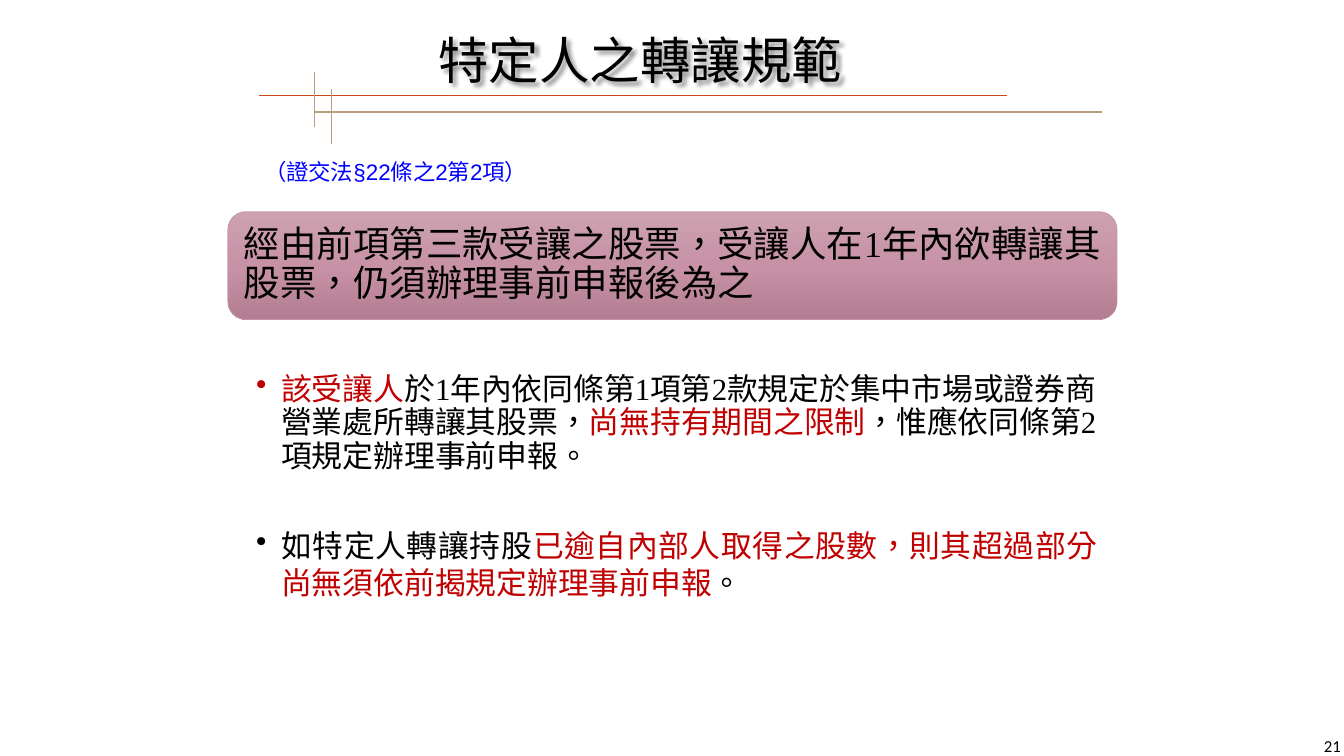
from typing import NamedTuple, Sequence

import pptx
import pptx.dml.color
import pptx.enum.shapes
import pptx.enum.text
import pptx.oxml
import pptx.oxml.ns
import pptx.util

Inches = pptx.util.Inches
Pt = pptx.util.Pt
RGBColor = pptx.dml.color.RGBColor
PP_ALIGN = pptx.enum.text.PP_ALIGN
MSO_ANCHOR = pptx.enum.text.MSO_ANCHOR

BLACK = RGBColor(0x00, 0x00, 0x00)
BLUE = RGBColor(0x00, 0x00, 0xFF)
RED = RGBColor(0xC0, 0x00, 0x00)
TAN = RGBColor(0xBA, 0x9C, 0x80)
ORANGE = RGBColor(0xCC, 0x46, 0x16)
BANNER_EDGE = RGBColor(0xC5, 0x94, 0xA6)
BANNER_TOP = RGBColor(0xCC, 0xA1, 0xB0)
BANNER_BOTTOM = RGBColor(0xB4, 0x7E, 0x92)

SERIF = "Times New Roman"


class Box(NamedTuple):
    left: float
    top: float
    width: float
    height: float


class Rule(NamedTuple):
    x1: float
    y1: float
    x2: float
    y2: float
    color: RGBColor


class Run(NamedTuple):
    text: str
    color: RGBColor = BLACK


class Bullet(NamedTuple):
    runs: Sequence[Run]
    align: PP_ALIGN
    line_spacing: float
    space_before: float


RULES = [
    Rule(3.12, 1.11, 10.93, 1.11, TAN),
    Rule(2.57, 0.95, 9.99, 0.95, ORANGE),
    Rule(3.12, 0.71, 3.12, 1.26, TAN),
    Rule(3.29, 0.88, 3.29, 1.43, TAN),
]

BULLETS = [
    Bullet([
        Run("該受讓人", RED),
        Run("於1年內依同條第1項第2款規定於集中市場或證券商營業處所轉讓其股票，"),
        Run("尚無持有期間之限制", RED),
        Run("，惟應依同條第2項規定辦理事前申報。"),
    ], PP_ALIGN.LEFT, 0.9, 0),
    Bullet([
        Run("如特定人轉讓持股"),
        Run("已逾自內部人取得之股數，則其超過部分尚無須依前揭規定辦理事前申報", RED),
        Run("。"),
    ], PP_ALIGN.JUSTIFY, 1.0, 38),
]


def add_run(p, text: str, *, size: float, font: str = SERIF, color: RGBColor = BLACK) -> None:
    r = p.add_run()
    r.text = text
    r.font.size = Pt(size)
    r.font.name = font
    r.font.color.rgb = color
    r._r.get_or_add_rPr().set("lang", "zh-TW")


def set_frame(tf, insets: Sequence[float], anchor: MSO_ANCHOR = MSO_ANCHOR.TOP) -> None:
    """Wrap the text; insets run left, top, right, bottom in inches."""
    tf.word_wrap = True
    tf.vertical_anchor = anchor
    tf.margin_left, tf.margin_top, tf.margin_right, tf.margin_bottom = map(Inches, insets)


def add_text(slide, box: Box, text: str, *, size: float, font: str = SERIF,
             color: RGBColor = BLACK, align: PP_ALIGN = PP_ALIGN.LEFT,
             line_spacing: float = 1.0, anchor: MSO_ANCHOR = MSO_ANCHOR.TOP,
             insets: Sequence[float] = (0.1, 0.05, 0.1, 0.05)):
    sp = slide.shapes.add_textbox(*map(Inches, box))
    set_frame(sp.text_frame, insets, anchor)
    p = sp.text_frame.paragraphs[0]
    p.alignment = align
    p.line_spacing = line_spacing
    add_run(p, text, size=size, font=font, color=color)
    return sp


def add_glyph_shadow(sp) -> None:
    """Cast a soft shadow from the letters of an unfilled text box."""
    sp._element.spPr.append(pptx.oxml.parse_xml(
        f'<a:effectLst {pptx.oxml.ns.nsdecls("a")}>'
        '<a:outerShdw blurRad="38100" dist="38100" dir="2700000" algn="tl">'
        '<a:srgbClr val="000000"><a:alpha val="43000"/></a:srgbClr>'
        '</a:outerShdw></a:effectLst>'))


def add_banner(slide, box: Box) -> None:
    sp = slide.shapes.add_shape(
        pptx.enum.shapes.MSO_SHAPE.ROUNDED_RECTANGLE, *map(Inches, box))
    sp.shadow.inherit = False
    sp.fill.gradient()
    sp.fill.gradient_angle = 270
    for stop, color in zip(sp.fill.gradient_stops, (BANNER_TOP, BANNER_BOTTOM)):
        stop.color.rgb = color
    middle = pptx.oxml.parse_xml(
        f'<a:gs {pptx.oxml.ns.nsdecls("a")} pos="50000"><a:srgbClr val="C792A5"/></a:gs>')
    sp._element.spPr.find(".//" + pptx.oxml.ns.qn("a:gsLst")).insert(1, middle)
    sp.line.color.rgb = BANNER_EDGE
    sp.line.width = Pt(0.5)


def add_rule(slide, rule: Rule) -> None:
    ends = map(Inches, rule[:4])
    line = slide.shapes.add_connector(pptx.enum.shapes.MSO_CONNECTOR.STRAIGHT, *ends)
    line.line.color.rgb = rule.color
    line.line.width = Pt(1)
    line._element.spPr.append(
        pptx.oxml.parse_xml(f'<a:effectLst {pptx.oxml.ns.nsdecls("a")}/>'))


def set_indent(p, left: float, first: float) -> None:
    pPr = p._p.get_or_add_pPr()
    pPr.set("marL", str(Inches(left)))
    pPr.set("indent", str(Inches(first)))


def add_bullets(slide, box: Box, bullets: Sequence[Bullet]) -> None:
    tf = slide.shapes.add_textbox(*map(Inches, box)).text_frame
    set_frame(tf, (0.28, 0.03, 0.19, 0.03))
    for i, bullet in enumerate(bullets):
        p = tf.add_paragraph() if i else tf.paragraphs[0]
        p.alignment = bullet.align
        p.line_spacing = bullet.line_spacing
        p.space_before = Pt(bullet.space_before)
        set_indent(p, 0.25, -0.25)
        p._p.get_or_add_pPr().append(pptx.oxml.parse_xml(
            f'<a:buChar {pptx.oxml.ns.nsdecls("a")} char="•"/>'))
        for run in bullet.runs:
            add_run(p, run.text, size=22, color=run.color)


def main() -> None:
    prs = pptx.Presentation()
    prs.slide_width, prs.slide_height = Inches(13.33), Inches(7.5)
    slide = prs.slides.add_slide(prs.slide_layouts[6])

    citation = add_text(slide, Box(2.18, 1.47, 8.99, 0.47), "（證交法§22條之2第2項）",
                        size=16, font="Arial", color=BLUE, line_spacing=1.2)
    set_indent(citation.text_frame.paragraphs[0], 0.59, -0.25)
    add_text(slide, Box(12.73, 7.3, 0.6, 0.2), "21", size=12, font="Calibri",
             align=PP_ALIGN.RIGHT, anchor=MSO_ANCHOR.MIDDLE, insets=(0, 0, 0.03, 0))
    title = add_text(slide, Box(2.73, 0.24, 7.24, 0.71), "特定人之轉讓規範",
                     size=36, font="Noto Sans CJK SC", align=PP_ALIGN.CENTER)
    add_glyph_shadow(title)

    add_banner(slide, Box(2.26, 2.1, 8.82, 1.07))
    add_text(slide, Box(2.31, 2.15, 8.72, 0.96),
             "經由前項第三款受讓之股票，受讓人在1年內欲轉讓其股票，仍須辦理事前申報後為之",
             size=26, line_spacing=0.9, anchor=MSO_ANCHOR.MIDDLE, insets=(0.11,) * 4)
    add_bullets(slide, Box(2.26, 3.68, 8.82, 3.1), BULLETS)

    for rule in RULES:
        add_rule(slide, rule)
    prs.save("out.pptx")


if __name__ == "__main__":
    main()
